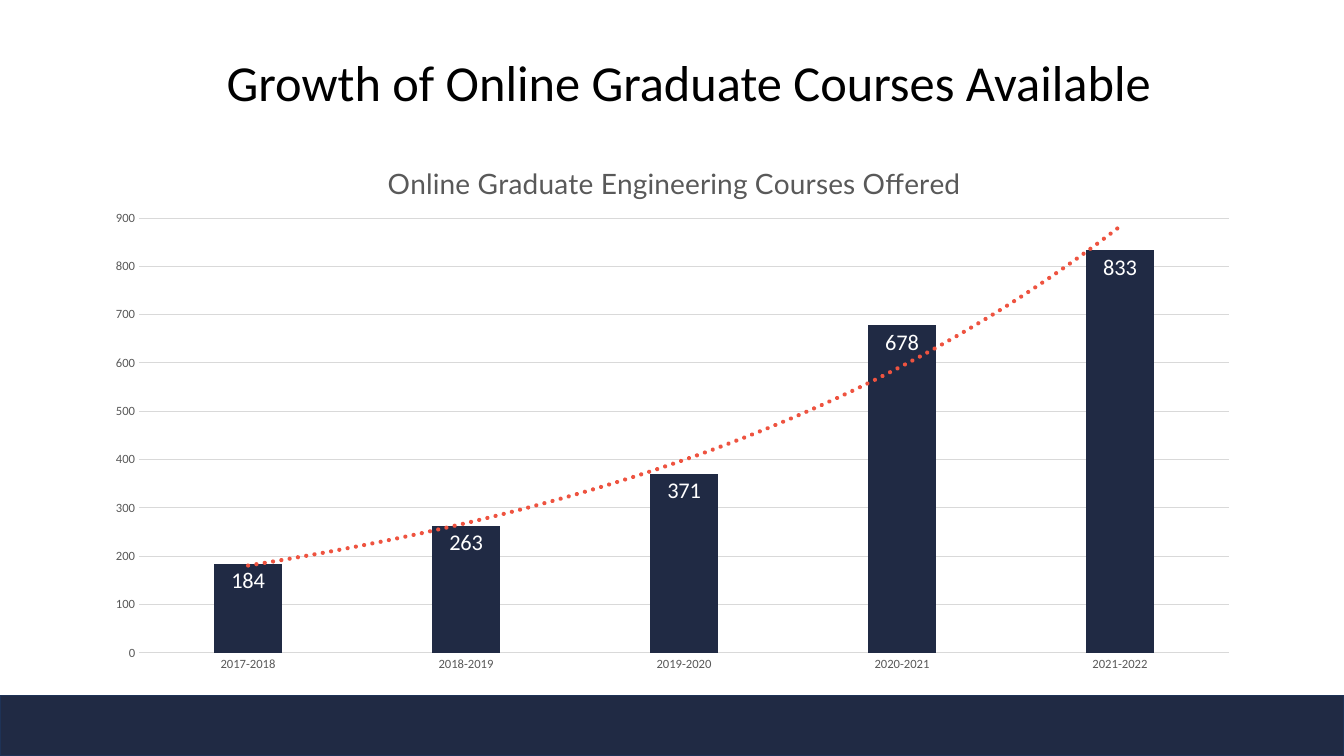
from pptx import Presentation
from pptx.chart.data import CategoryChartData
from pptx.dml.color import RGBColor
from pptx.enum.chart import XL_CHART_TYPE, XL_LABEL_POSITION, XL_TICK_MARK
from pptx.enum.shapes import MSO_SHAPE
from pptx.enum.text import MSO_ANCHOR, PP_ALIGN
from pptx.oxml import parse_xml
from pptx.oxml.ns import nsdecls
from pptx.util import Inches, Pt

NAVY = RGBColor(0x20, 0x2A, 0x44)
NAVY_EDGE = RGBColor(0x1E, 0x32, 0x56)
CORAL = RGBColor(0xEE, 0x53, 0x40)
GREY = RGBColor(0x59, 0x59, 0x59)
PALE_GREY = RGBColor(0xD9, 0xD9, 0xD9)
BLACK = RGBColor(0, 0, 0)
WHITE = RGBColor(0xFF, 0xFF, 0xFF)

SLIDE_WIDTH, SLIDE_HEIGHT = 13.33, 7.5
BAND_HEIGHT = 0.6
COURSES_BY_YEAR = {
    "2017-2018": 184,
    "2018-2019": 263,
    "2019-2020": 371,
    "2020-2021": 678,
    "2021-2022": 833,
}


def style_font(font, size, color, name="Calibri"):
    font.size = Pt(size)
    font.color.rgb = color
    font.name = name
    font.bold = False


def write_text(frame, text, size, color, name="Calibri", align=PP_ALIGN.LEFT, spacing=None):
    paragraph = frame.paragraphs[0]
    paragraph.alignment = align
    paragraph.line_spacing = spacing
    run = paragraph.add_run()
    run.text = text
    style_font(run.font, size, color, name)


def add_footer_band(slide, left, top, width, height):
    band = slide.shapes.add_shape(
        MSO_SHAPE.RECTANGLE, Inches(left), Inches(top), Inches(width), Inches(height))
    band.shadow.inherit = False
    band.fill.solid()
    band.fill.fore_color.rgb = NAVY
    band.line.color.rgb = NAVY_EDGE
    band.line.width = Pt(1)


def add_heading(slide, left, top, width, height):
    heading = slide.shapes.add_textbox(
        Inches(left), Inches(top), Inches(width), Inches(height))
    frame = heading.text_frame
    frame.word_wrap = True
    frame.vertical_anchor = MSO_ANCHOR.MIDDLE
    write_text(frame, "Growth of Online Graduate Courses Available", 36, BLACK, spacing=0.9)


def set_layout(parent, index, target="", **fractions):
    """Place a chart part by fractions (x, y, w, h) of the chart's box."""
    for old_layout in parent.xpath("c:layout"):
        parent.remove(old_layout)
    inner = f'<c:layoutTarget val="{target}"/>' if target else ""
    modes = "".join(f'<c:{axis}Mode val="edge"/>' for axis in "xy")
    values = "".join(f'<c:{key} val="{value}"/>' for key, value in fractions.items())
    parent.insert(index, parse_xml(
        f'<c:layout {nsdecls("c")}><c:manualLayout>{inner}{modes}{values}'
        '</c:manualLayout></c:layout>'))


def add_growth_trend(series):
    """Give the series a dotted exponential trend line."""
    trend = parse_xml(
        f'<c:trendline {nsdecls("c", "a")}><c:spPr><a:ln w="{Pt(3)}" cap="rnd">'
        f'<a:solidFill><a:srgbClr val="{CORAL}"/></a:solidFill>'
        '<a:prstDash val="sysDot"/></a:ln></c:spPr><c:trendlineType val="exp"/>'
        '<c:dispRSqr val="0"/><c:dispEq val="0"/></c:trendline>')
    series._element.xpath("c:cat")[0].addprevious(trend)


def style_axes(chart):
    years, counts = chart.category_axis, chart.value_axis
    for axis in (years, counts):
        axis.major_tick_mark = axis.minor_tick_mark = XL_TICK_MARK.NONE
        style_font(axis.tick_labels.font, 9, GREY)
    counts.minimum_scale, counts.maximum_scale, counts.major_unit = 0, 900, 100
    counts.format.line.fill.background()
    counts.has_major_gridlines = True
    for line in (years.format.line, counts.major_gridlines.format.line):
        line.color.rgb = PALE_GREY
        line.width = Pt(0.75)


def style_bars(plot):
    plot.gap_width = 219
    plot.overlap = -27
    plot.vary_by_categories = False
    courses = plot.series[0]
    courses.format.fill.solid()
    courses.format.fill.fore_color.rgb = NAVY
    courses.invert_if_negative = False
    labels = courses.data_labels
    labels.show_value = True
    labels.position = XL_LABEL_POSITION.INSIDE_END
    style_font(labels.font, 16, WHITE)
    add_growth_trend(courses)


def add_courses_chart(slide, left, top, width, height):
    data = CategoryChartData()
    data.categories = list(COURSES_BY_YEAR)
    data.add_series("Series 1", list(COURSES_BY_YEAR.values()))
    chart = slide.shapes.add_chart(
        XL_CHART_TYPE.COLUMN_CLUSTERED, Inches(left), Inches(top),
        Inches(width), Inches(height), data).chart
    chart.has_legend = False
    style_font(chart.font, 10, BLACK)
    chart.has_title = True
    write_text(chart.chart_title.text_frame, "Online Graduate Engineering Courses Offered",
               20, GREY, name="Lato", align=PP_ALIGN.CENTER)
    style_axes(chart)
    style_bars(chart.plots[0])
    chart_area = chart._chartSpace
    set_layout(chart_area.xpath("c:chart/c:title")[0], 1, x=0.25, y=0.05)
    set_layout(chart_area.xpath("c:chart/c:plotArea")[0], 0, target="inner",
               x=0.04, y=0.16, w=0.94, h=0.79)


def main():
    deck = Presentation()
    deck.slide_width = Inches(SLIDE_WIDTH)
    deck.slide_height = Inches(SLIDE_HEIGHT)
    slide = deck.slides.add_slide(deck.slide_layouts[6])
    add_footer_band(slide, 0, SLIDE_HEIGHT - BAND_HEIGHT, SLIDE_WIDTH, BAND_HEIGHT)
    add_heading(slide, 2.15, 0.4, 10.27, 0.89)
    add_courses_chart(slide, 0.92, 1.29, 11.5, 5.46)
    deck.save("out.pptx")


if __name__ == "__main__":
    main()
